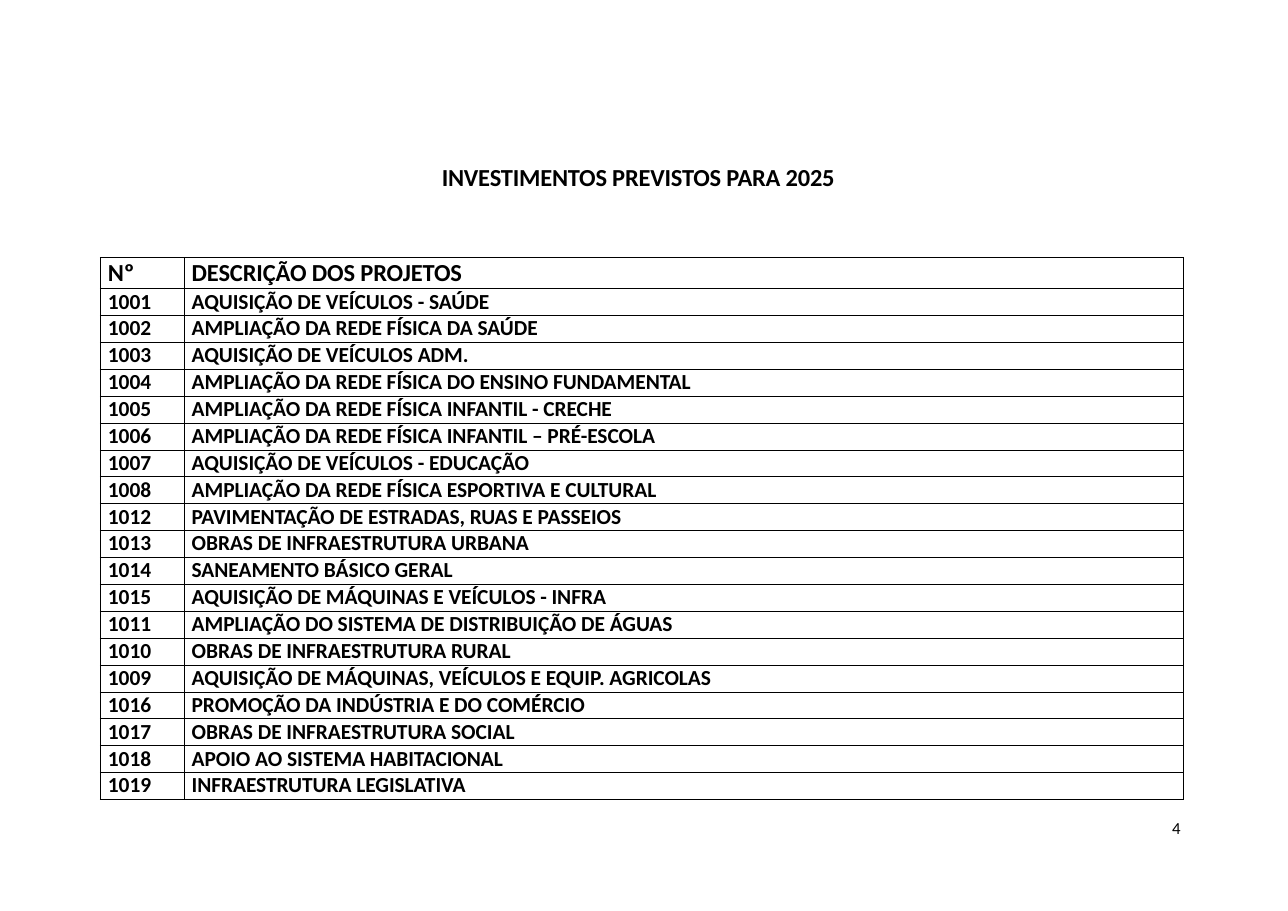
from dataclasses import dataclass

from lxml.etree import SubElement
from pptx import Presentation
from pptx.dml.color import RGBColor as Color
from pptx.oxml.ns import qn
from pptx.util import Inches, Pt

TITLE = "INVESTIMENTOS PREVISTOS PARA 2025"
PAGE_NUMBER = "4"
HEADER = ("Nº", "DESCRIÇÃO DOS PROJETOS")
PROJECTS = [
    ("1001", "AQUISIÇÃO DE VEÍCULOS - SAÚDE"),
    ("1002", "AMPLIAÇÃO DA REDE FÍSICA DA SAÚDE"),
    ("1003", "AQUISIÇÃO DE VEÍCULOS ADM."),
    ("1004", "AMPLIAÇÃO DA REDE FÍSICA DO ENSINO FUNDAMENTAL"),
    ("1005", "AMPLIAÇÃO DA REDE FÍSICA INFANTIL - CRECHE"),
    ("1006", "AMPLIAÇÃO DA REDE FÍSICA INFANTIL – PRÉ-ESCOLA"),
    ("1007", "AQUISIÇÃO DE VEÍCULOS - EDUCAÇÃO"),
    ("1008", "AMPLIAÇÃO DA REDE FÍSICA ESPORTIVA E CULTURAL"),
    ("1012", "PAVIMENTAÇÃO DE ESTRADAS, RUAS E PASSEIOS"),
    ("1013", "OBRAS DE INFRAESTRUTURA URBANA"),
    ("1014", "SANEAMENTO BÁSICO GERAL"),
    ("1015", "AQUISIÇÃO DE MÁQUINAS E VEÍCULOS - INFRA"),
    ("1011", "AMPLIAÇÃO DO SISTEMA DE DISTRIBUIÇÃO DE ÁGUAS"),
    ("1010", "OBRAS DE INFRAESTRUTURA RURAL"),
    ("1009", "AQUISIÇÃO DE MÁQUINAS, VEÍCULOS E EQUIP. AGRICOLAS"),
    ("1016", "PROMOÇÃO DA INDÚSTRIA E DO COMÉRCIO"),
    ("1017", "OBRAS DE INFRAESTRUTURA SOCIAL"),
    ("1018", "APOIO AO SISTEMA HABITACIONAL"),
    ("1019", "INFRAESTRUTURA LEGISLATIVA"),
]


@dataclass(frozen=True)
class Theme:
    font: str = "Calibri"
    ink: str = "000000"
    heading: int = 16
    body: int = 14
    page: int = 11
    border: float = 0.58


THEME = Theme()
TABLE_LEFT, TABLE_TOP, TABLE_HEIGHT = 0.91, 2.34, 4.92
COLUMN_WIDTHS = (0.76, 9.07)
HEADER_HEIGHT = 0.28
CELL_INDENT = 0.07


def add_run(paragraph, text, size, bold=True, spacing=0):
    run = paragraph.add_run()
    run.text = text
    font = run.font
    font.name, font.size, font.bold = THEME.font, Pt(size), bold
    font.color.rgb = Color.from_string(THEME.ink)
    if spacing:
        font._element.set("spc", str(round(spacing * 100)))


def add_label(slide, text, box, size, indent, bold=True, spacing=0):
    frame = slide.shapes.add_textbox(*map(Inches, box)).text_frame
    frame.word_wrap = True
    frame.margin_left = Inches(indent)
    frame.margin_right = frame.margin_top = frame.margin_bottom = 0
    add_run(frame.paragraphs[0], text, size, bold, spacing)


def set_borders(cell):
    properties = cell._tc.get_or_add_tcPr()
    for side in ("lnL", "lnR", "lnT", "lnB"):
        line = SubElement(properties, qn(f"a:{side}"), w=str(Pt(THEME.border)))
        fill = SubElement(line, qn("a:solidFill"))
        SubElement(fill, qn("a:srgbClr"), val=THEME.ink)


def fill_cell(cell, text, size):
    set_borders(cell)
    cell.fill.background()
    cell.margin_left = Inches(CELL_INDENT)
    cell.margin_right = cell.margin_top = cell.margin_bottom = 0
    add_run(cell.text_frame.paragraphs[0], text, size, spacing=-0.05)


def add_projects(slide):
    rows = [HEADER, *PROJECTS]
    box = (TABLE_LEFT, TABLE_TOP, sum(COLUMN_WIDTHS), TABLE_HEIGHT)
    table = slide.shapes.add_table(len(rows), len(HEADER), *map(Inches, box)).table
    table.first_row = table.horz_banding = False
    for column, width in zip(table.columns, COLUMN_WIDTHS):
        column.width = Inches(width)
    project_height = (TABLE_HEIGHT - HEADER_HEIGHT) / len(PROJECTS)
    for index, (row, texts) in enumerate(zip(table.rows, rows)):
        row.height = Inches(project_height if index else HEADER_HEIGHT)
        for cell, text in zip(row.cells, texts):
            fill_cell(cell, text, THEME.body if index else THEME.heading)


def main():
    presentation = Presentation()
    presentation.slide_width, presentation.slide_height = Inches(11.69), Inches(8.27)
    slide = presentation.slides.add_slide(presentation.slide_layouts[6])
    add_label(slide, PAGE_NUMBER, (10.61, 7.42, 0.13, 0.18), THEME.page, 0.03, bold=False)
    add_label(slide, TITLE, (4, 1.47, 3.69, 0.25), THEME.heading, 0.01, spacing=-0.1)
    add_projects(slide)
    presentation.save("out.pptx")


if __name__ == "__main__":
    main()
